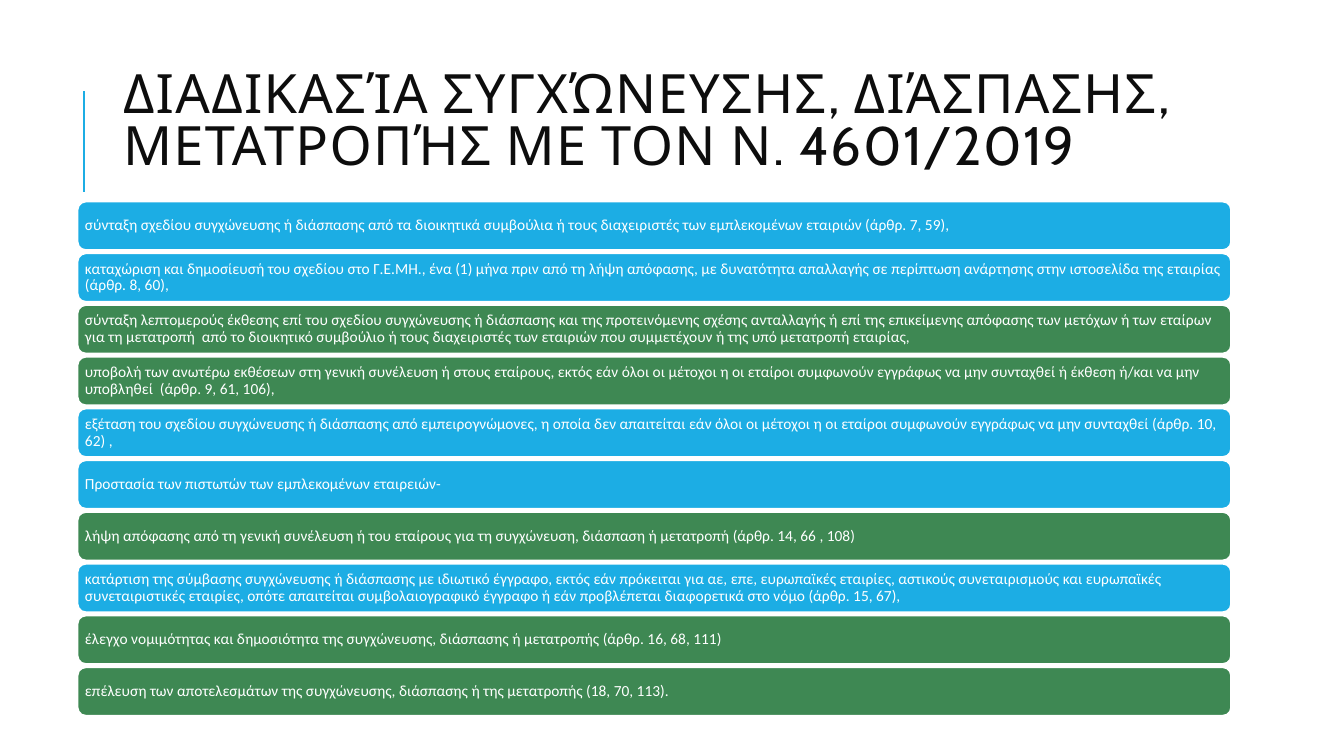
from dataclasses import dataclass

from lxml import etree
from pptx import Presentation
from pptx.dml.color import RGBColor
from pptx.enum.shapes import MSO_CONNECTOR, MSO_SHAPE
from pptx.enum.text import MSO_ANCHOR, MSO_AUTO_SIZE, PP_ALIGN
from pptx.oxml.ns import qn
from pptx.util import Inches, Pt

STRAIGHT = MSO_CONNECTOR.STRAIGHT
ROUNDED = MSO_SHAPE.ROUNDED_RECTANGLE
MIDDLE = MSO_ANCHOR.MIDDLE
NO_AUTOFIT = MSO_AUTO_SIZE.NONE
LEFT = PP_ALIGN.LEFT
TITLE_ONLY = 5


@dataclass(frozen=True)
class Theme:
    blue: RGBColor = RGBColor.from_string("1CADE4")
    green: RGBColor = RGBColor.from_string("3E8853")
    white: RGBColor = RGBColor.from_string("FFFFFF")
    ink: RGBColor = RGBColor.from_string("0D0D0D")
    title_font: str = "Cabin"
    body_font: str = "Calibri"
    title_size: float = 38.7
    body_size: float = 11


THEME = Theme()

TITLE = "ΔΙΑΔΙΚΑΣΊΑ ΣΥΓΧΏΝΕΥΣΗΣ, ΔΙΆΣΠΑΣΗΣ, ΜΕΤΑΤΡΟΠΉΣ ΜΕ ΤΟΝ Ν. 4601/2019"

STEPS = [
    ("σύνταξη σχεδίου συγχώνευσης ή διάσπασης από τα διοικητικά συμβούλια ή τους "
     "διαχειριστές των εμπλεκομένων εταιριών (άρθρ. 7, 59),", THEME.blue),
    ("καταχώριση και δημοσίευσή του σχεδίου στο Γ.Ε.ΜΗ., ένα (1) μήνα πριν από τη λήψη "
     "απόφασης, με δυνατότητα απαλλαγής σε περίπτωση ανάρτησης στην ιστοσελίδα της "
     "εταιρίας (άρθρ. 8, 60),", THEME.blue),
    ("σύνταξη λεπτομερούς έκθεσης επί του σχεδίου συγχώνευσης ή διάσπασης και της "
     "προτεινόμενης σχέσης ανταλλαγής ή επί της επικείμενης απόφασης των μετόχων ή των "
     "εταίρων για τη μετατροπή  από το διοικητικό συμβούλιο ή τους διαχειριστές των "
     "εταιριών που συμμετέχουν ή της υπό μετατροπή εταιρίας,", THEME.green),
    ("υποβολή των ανωτέρω εκθέσεων στη γενική συνέλευση ή στους εταίρους, εκτός εάν όλοι "
     "οι μέτοχοι η οι εταίροι συμφωνούν εγγράφως να μην συνταχθεί ή έκθεση ή/και να μην "
     "υποβληθεί  (άρθρ. 9, 61, 106),", THEME.green),
    ("εξέταση του σχεδίου συγχώνευσης ή διάσπασης από εμπειρογνώμονες, η οποία δεν "
     "απαιτείται εάν όλοι οι μέτοχοι η οι εταίροι συμφωνούν εγγράφως να μην συνταχθεί "
     "(άρθρ. 10, 62) ,", THEME.blue),
    ("Προστασία των πιστωτών των εμπλεκομένων εταιρειών-", THEME.blue),
    ("λήψη απόφασης από τη γενική συνέλευση ή του εταίρους για τη συγχώνευση, διάσπαση ή "
     "μετατροπή (άρθρ. 14, 66 , 108)", THEME.green),
    ("κατάρτιση της σύμβασης συγχώνευσης ή διάσπασης με ιδιωτικό έγγραφο, εκτός εάν "
     "πρόκειται για αε, επε, ευρωπαϊκές εταιρίες, αστικούς συνεταιρισμούς και ευρωπαϊκές "
     "συνεταιριστικές εταιρίες, οπότε απαιτείται συμβολαιογραφικό έγγραφο ή εάν "
     "προβλέπεται διαφορετικά στο νόμο (άρθρ. 15, 67),", THEME.blue),
    ("έλεγχο νομιμότητας και δημοσιότητα της συγχώνευσης, διάσπασης ή μετατροπής "
     "(άρθρ. 16, 68, 111)", THEME.green),
    ("επέλευση των αποτελεσμάτων της συγχώνευσης, διάσπασης ή της μετατροπής "
     "(18, 70, 113).", THEME.green),
]


def write_text(shape, text, *, font, size, color, line_spacing, inset, tracking=0):
    frame = shape.text_frame
    frame.word_wrap = True
    frame.auto_size = NO_AUTOFIT
    frame.vertical_anchor = MIDDLE
    frame.margin_left = frame.margin_right = Inches(inset[0])
    frame.margin_top = frame.margin_bottom = Inches(inset[1])
    paragraph = frame.paragraphs[0]
    paragraph.alignment = LEFT
    paragraph.line_spacing = line_spacing
    run = paragraph.add_run()
    run.text = text
    run.font.name = font
    run.font.size = Pt(size)
    run.font.color.rgb = color
    if tracking:
        run.font._element.set("spc", str(tracking * 100))


def add_title(slide, left, top, width, height):
    title = slide.shapes.title
    title.left, title.top = Inches(left), Inches(top)
    title.width, title.height = Inches(width), Inches(height)
    write_text(title, TITLE, font=THEME.title_font, size=THEME.title_size,
               color=THEME.ink, line_spacing=0.8, inset=(0.1, 0.05), tracking=1)
    rule_x = Inches(left - 0.29)
    rule = slide.shapes.add_connector(
        STRAIGHT, rule_x, Inches(top + 1.26), rule_x, Inches(top + 0.26))
    rule.line.color.rgb = THEME.blue
    rule.line.width = Pt(1.5)
    etree.SubElement(rule._element.spPr, qn("a:effectLst"))


def add_steps(slide, left, top, width, height):
    bar_height = 0.48
    pitch = (height - bar_height) / (len(STEPS) - 1)
    for index, (text, color) in enumerate(STEPS):
        bar = slide.shapes.add_shape(
            ROUNDED, Inches(left), Inches(top + index * pitch),
            Inches(width), Inches(bar_height))
        bar.shadow.inherit = False
        bar.fill.solid()
        bar.fill.fore_color.rgb = color
        bar.line.color.rgb = THEME.white
        bar.line.width = Pt(1.25)
        write_text(bar, text, font=THEME.body_font, size=THEME.body_size,
                   color=THEME.white, line_spacing=0.9, inset=(0.05, 0.05))


def main():
    presentation = Presentation()
    presentation.slide_width = Inches(13.33)
    presentation.slide_height = Inches(7.5)
    slide = presentation.slides.add_slide(presentation.slide_layouts[TITLE_ONLY])
    add_title(slide, 1.12, 0.64, 10.63, 1.18)
    add_steps(slide, 0.77, 2, 11.44, 5.1)
    presentation.save("out.pptx")


if __name__ == "__main__":
    main()
